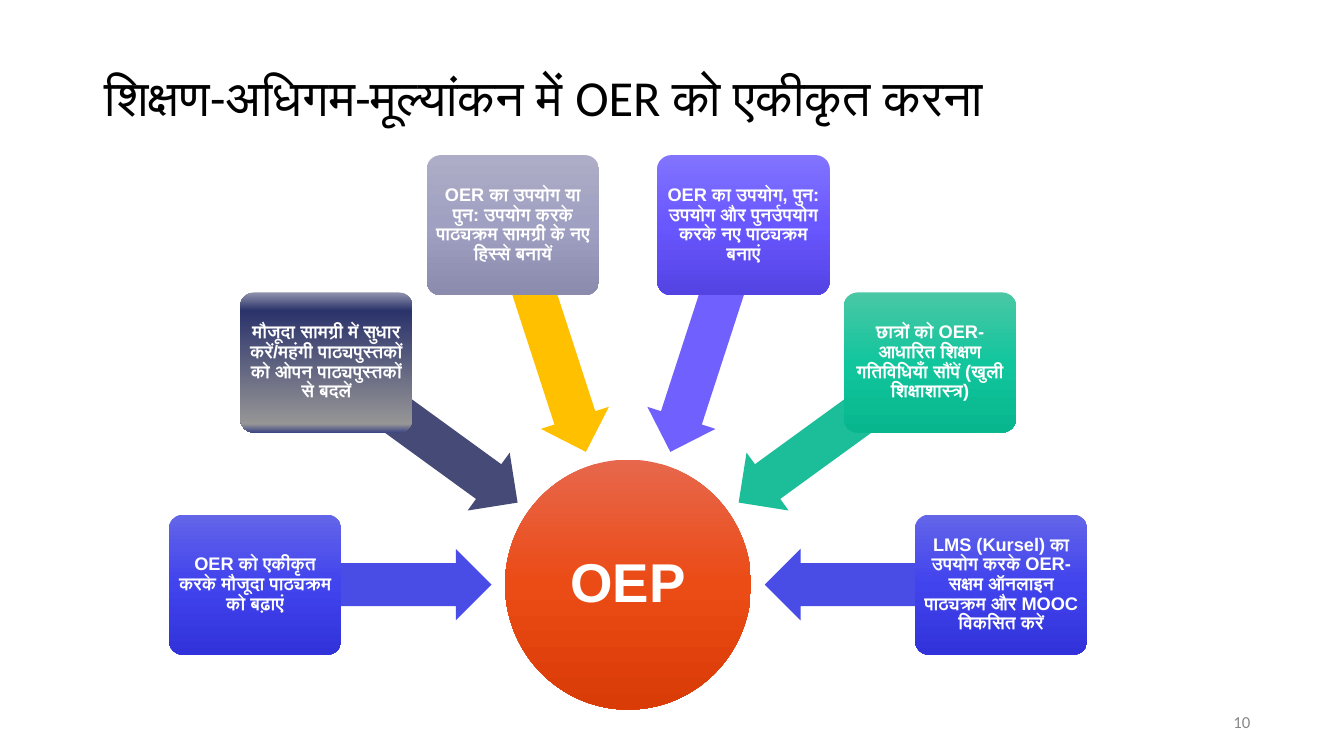
import math
from lxml import etree
from pptx import Presentation
from pptx.dml.color import RGBColor
from pptx.enum import shapes, text
from pptx.oxml import ns
from pptx.util import Inches, Pt

BLACK = RGBColor(0x00, 0x00, 0x00)
WHITE = RGBColor(0xFF, 0xFF, 0xFF)
GREY = RGBColor(0x88, 0x88, 0x88)
BLUE = RGBColor(0x4A, 0x4C, 0xE6)
NAVY = RGBColor(0x45, 0x4B, 0x76)
AMBER = RGBColor(0xFF, 0xC0, 0x00)
VIOLET = RGBColor(0x70, 0x60, 0xFD)
GREEN = RGBColor(0x1B, 0xBE, 0x99)


def shades(*stops):
    """Return gradient stops as pairs of percentage and colour."""
    return [(place, RGBColor.from_string(value)) for place, value in stops]


BLUE_SHADES = shades((0, "6365E9"), (50, "4143ED"), (100, "3132D9"))
NAVY_SHADES = shades((0, "9194AD"), (13, "2B336B"), (94, "969696"), (100, "3D4684"))
LILAC_SHADES = shades((0, "ADADC7"), (50, "A0A0C2"), (100, "8B8BAD"))
VIOLET_SHADES = shades((0, "8274FF"), (50, "6957FF"), (100, "5443E3"))
GREEN_SHADES = shades((0, "4AC7A5"), (50, "11C69D"), (100, "08B68E"))
ORANGE_SHADES = shades((0, "E7674C"), (50, "EB4B15"), (100, "DA3C07"))

HUB_X, HUB_Y = 6.23, 5.8
STEP = 36
PRACTICES = [
    ("OER को एकीकृत करके मौजूदा पाठ्यक्रम को बढ़ाएं", BLUE, BLUE_SHADES),
    ("मौजूदा सामग्री में सुधार करें/महंगी पाठ्यपुस्तकों को ओपन पाठ्यपुस्तकों से बदलें",
     NAVY, NAVY_SHADES),
    ("OER का उपयोग या पुन: उपयोग करके पाठ्यक्रम सामग्री के नए हिस्से बनायें",
     AMBER, LILAC_SHADES),
    ("OER का उपयोग, पुन: उपयोग और पुनर्उपयोग करके नए पाठ्यक्रम बनाएं",
     VIOLET, VIOLET_SHADES),
    ("छात्रों को OER-आधारित शिक्षण गतिविधियाँ सौंपें (खुली शिक्षाशास्त्र)",
     GREEN, GREEN_SHADES),
    ("LMS (Kursel) का उपयोग करके OER-सक्षम ऑनलाइन पाठ्यक्रम और MOOC विकसित करें",
     BLUE, BLUE_SHADES),
]


def write(shape, words, size, color, name, align, spacing=0.9, bold=False, inset=(0.1, 0.05)):
    """Put one styled, vertically centred paragraph into a shape."""
    frame = shape.text_frame
    frame.word_wrap = True
    frame.vertical_anchor = text.MSO_ANCHOR.MIDDLE
    frame.margin_left = frame.margin_right = Inches(inset[0])
    frame.margin_top = frame.margin_bottom = Inches(inset[1])
    para = frame.paragraphs[0]
    para.text = words
    para.alignment = align
    para.line_spacing = spacing
    para.font.size = Pt(size)
    para.font.name = name
    para.font.bold = bold
    para.font.color.rgb = color


def add_label(page, left, top, width, height, *words, **style):
    """Add a text box with one paragraph."""
    box = page.shapes.add_textbox(Inches(left), Inches(top), Inches(width), Inches(height))
    write(box, *words, **style)


def add_centred(page, kind, x, y, width, height):
    """Add a plain preset shape around a centre point."""
    shape = page.shapes.add_shape(kind, Inches(x - width / 2), Inches(y - height / 2),
                                  Inches(width), Inches(height))
    shape.shadow.inherit = False
    shape.line.fill.background()
    return shape


def shade(shape, stops):
    """Fill a shape with a gradient running from top to bottom."""
    shape.fill.gradient()
    shape.fill.gradient_angle = 270
    stop_list = shape._element.spPr.find(ns.qn("a:gradFill")).find(ns.qn("a:gsLst"))
    for old in list(stop_list):
        stop_list.remove(old)
    for place, color in stops:
        stop = etree.SubElement(stop_list, ns.qn("a:gs"), pos=str(place * 1000))
        etree.SubElement(stop, ns.qn("a:srgbClr"), val=str(color))


def add_arrow(page, x, y, rotation, color):
    """Add a block arrow pointing at the hub."""
    arrow = add_centred(page, shapes.MSO_SHAPE.LEFT_ARROW, x, y, 2.35, 0.71)
    arrow.adjustments[0] = 0.6
    arrow.adjustments[1] = 0.5
    arrow.rotation = rotation
    arrow.fill.solid()
    arrow.fill.fore_color.rgb = color


def add_practice(page, x, y, words, stops):
    """Add a rounded box describing one practice."""
    box = add_centred(page, shapes.MSO_SHAPE.ROUNDED_RECTANGLE, x, y, 1.71, 1.39)
    box.adjustments[0] = 0.1
    shade(box, stops)
    write(box, words, 13, WHITE, "Arial", text.PP_ALIGN.CENTER, bold=True, inset=(0.04, 0.04))


def add_hub(page):
    """Add the central circle."""
    hub = add_centred(page, shapes.MSO_SHAPE.OVAL, HUB_X, HUB_Y, 2.44, 2.48)
    shade(hub, ORANGE_SHADES)
    write(hub, "OEP", 39, WHITE, "Arial", text.PP_ALIGN.CENTER, bold=True, inset=(0.03, 0.03))


def main():
    """Build the slide and save it."""
    deck = Presentation()
    deck.slide_width, deck.slide_height = Inches(13.33), Inches(7.5)
    page = deck.slides.add_slide(deck.slide_layouts[6])
    add_label(page, 0.94, 0.44, 12.09, 1.1, "शिक्षण-अधिगम-मूल्यांकन में OER को एकीकृत करना",
              36, BLACK, "Calibri", text.PP_ALIGN.LEFT)
    add_label(page, 9.42, 6.97, 3.08, 0.38, "10", 12, GREY, "Calibri",
              text.PP_ALIGN.RIGHT, spacing=1.0)
    add_hub(page)
    for index, (words, color, stops) in enumerate(PRACTICES):
        angle = math.radians(180 + STEP * index)
        across, down = math.cos(angle), math.sin(angle)
        add_arrow(page, HUB_X + 2.53 * across, HUB_Y + 2.56 * down,
                  (180 + STEP * index) % 360, color)
        add_practice(page, HUB_X + 3.7 * across, HUB_Y + 3.75 * down, words, stops)
    deck.save("out.pptx")


if __name__ == "__main__":
    main()
